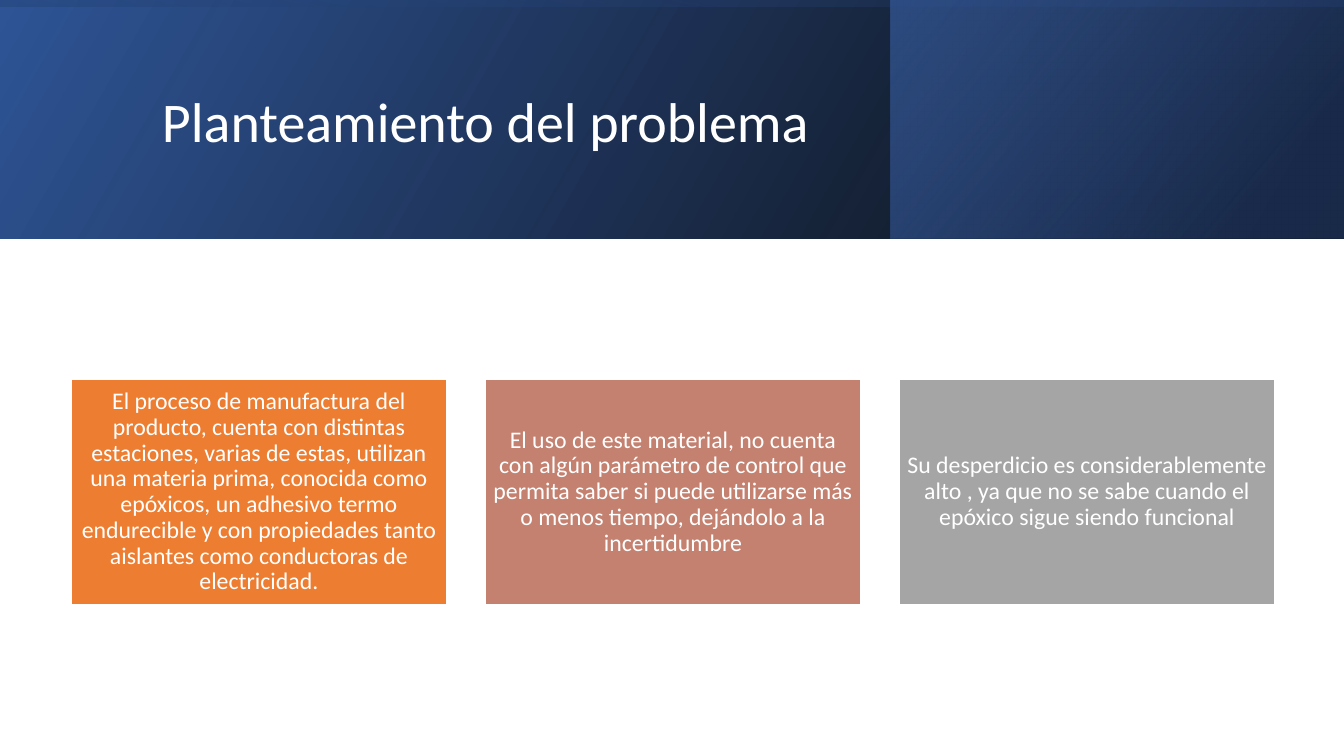
from lxml import etree
from pptx import Presentation
from pptx.dml.color import RGBColor
from pptx.enum.shapes import MSO_SHAPE as Shape
from pptx.enum.text import MSO_ANCHOR as Anchor, PP_ALIGN as Align
from pptx.oxml.ns import qn
from pptx.util import Pt

EMU_PER_PX = 12192000 / 1344
WIDTH, HEIGHT = 1344, 756
BAND_HEIGHT = 239
FONT = "Calibri"
WHITE = "FFFFFF"

CARDS = [
    ("ED7D31", "El proceso de manufactura del producto, cuenta con distintas "
               "estaciones, varias de estas, utilizan una materia prima, conocida "
               "como epóxicos, un adhesivo termo endurecible y con propiedades "
               "tanto aislantes como conductoras de electricidad."),
    ("C48170", "El uso de este material, no cuenta con algún parámetro de control "
               "que permita saber si puede utilizarse más o menos tiempo, "
               "dejándolo a la incertidumbre"),
    ("A5A5A5", "Su desperdicio es considerablemente alto , ya que no se sabe "
               "cuando el epóxico sigue siendo funcional"),
]


def px(length):
    return round(length * EMU_PER_PX)


def color(hex_value):
    return RGBColor.from_string(hex_value)


def add_rectangle(slide, left, top, width, height):
    shape = slide.shapes.add_shape(
        Shape.RECTANGLE, px(left), px(top), px(width), px(height))
    shape.shadow.inherit = False
    return shape


def write_text(shape, text, size, alignment, margins):
    frame = shape.text_frame
    frame.word_wrap = True
    frame.vertical_anchor = Anchor.MIDDLE
    frame.margin_left = frame.margin_right = px(margins[0])
    frame.margin_top = frame.margin_bottom = px(margins[1])
    paragraph = frame.paragraphs[0]
    paragraph.text = text
    paragraph.alignment = alignment
    paragraph.line_spacing = 0.9
    paragraph.font.name = FONT
    paragraph.font.size = Pt(size)
    paragraph.font.color.rgb = color(WHITE)


def add_gradient_panel(slide, left, top, width, height, stops, angle, rotation=0):
    """Mirrored panel; stops are (position %, colour, opacity %)."""
    shape = add_rectangle(slide, left, top, width, height)
    shape.rotation = rotation
    shape.line.fill.background()
    shape.fill.background()
    properties = shape._element.spPr
    properties.find(qn("a:xfrm")).set("flipH", "1")

    # Gradient with transparent stops
    gradient = etree.Element(qn("a:gradFill"), rotWithShape="1")
    stop_list = etree.SubElement(gradient, qn("a:gsLst"))
    for position, hex_value, opacity in stops:
        stop = etree.SubElement(stop_list, qn("a:gs"), pos=str(position * 1000))
        stop_color = etree.SubElement(stop, qn("a:srgbClr"), val=hex_value)
        etree.SubElement(stop_color, qn("a:alpha"), val=str(opacity * 1000))
    etree.SubElement(gradient, qn("a:lin"), ang=str(angle * 60000), scaled="0")
    properties.replace(properties.find(qn("a:noFill")), gradient)


def add_header(slide, left, top, width, height):
    # Base band, right panel, then a quarter-turned veil over the whole band
    add_gradient_panel(slide, left, top, width, height,
                       [(0, "000000", 96), (100, "2F5597", 100)], 330)
    panel_left = left + 891
    add_gradient_panel(slide, panel_left, top, left + width - panel_left, height,
                       [(19, "203864", 68), (100, "4472C4", 48)], 320)
    turn_offset = (width - height) / 2
    add_gradient_panel(slide, left + turn_offset, top - turn_offset, height, width,
                       [(23, "2F5597", 16), (99, "000000", 45)], 350, rotation=270)

    # Title
    title = slide.shapes.add_textbox(
        px(left + 152), px(top + 38), px(1072), px(173))
    write_text(title, "Planteamiento del problema", 40, Align.LEFT, (10, 5))


def add_cards(slide, left, top, width, height, gap):
    card_width = (width - gap * (len(CARDS) - 1)) / len(CARDS)
    for index, (fill, text) in enumerate(CARDS):
        card = add_rectangle(
            slide, left + index * (card_width + gap), top, card_width, height)
        card.fill.solid()
        card.fill.fore_color.rgb = color(fill)
        card.line.color.rgb = color(WHITE)
        card.line.width = Pt(1)
        write_text(card, text, 17, Align.CENTER, (7, 7))


def main():
    presentation = Presentation()
    presentation.slide_width, presentation.slide_height = px(WIDTH), px(HEIGHT)
    slide = presentation.slides.add_slide(presentation.slide_layouts[6])
    add_header(slide, 0, 0, WIDTH, BAND_HEIGHT)
    add_cards(slide, 71, 379, 1204, 226, gap=38)
    presentation.save("out.pptx")


if __name__ == "__main__":
    main()
